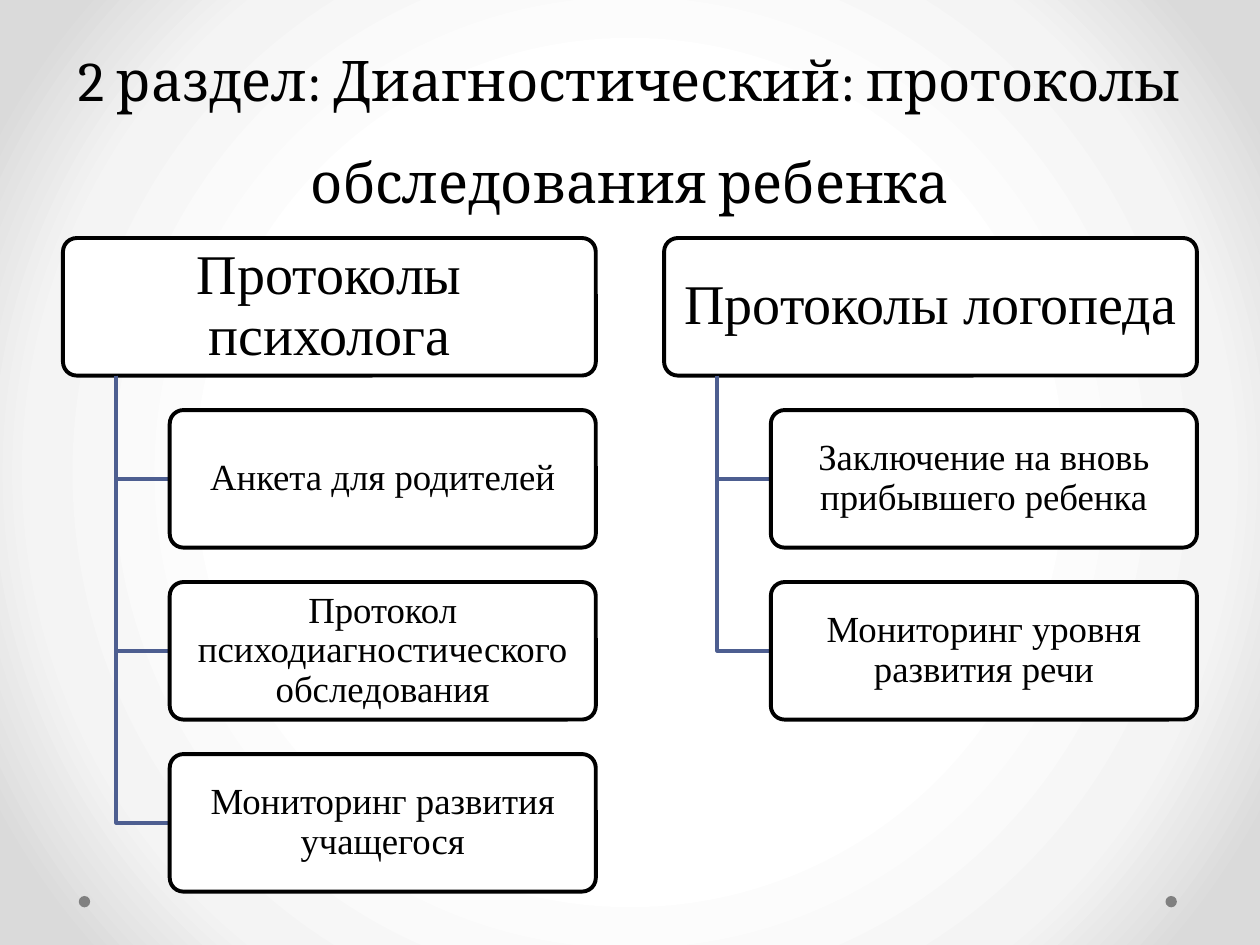
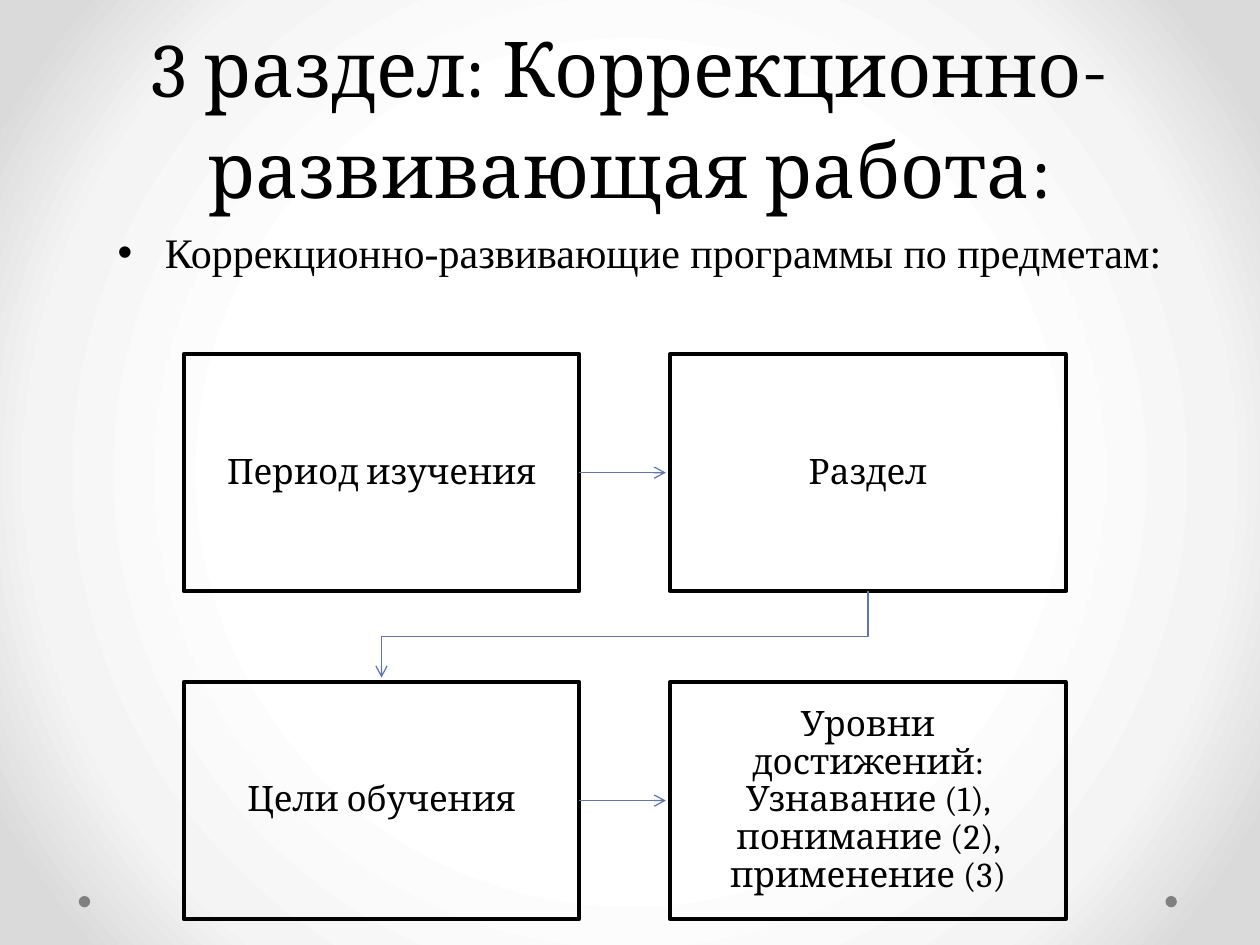
import pptx
import pptx.util
import pptx.oxml
import pptx.oxml.ns
import pptx.dml.color
import pptx.enum.shapes
import pptx.enum.text
import lxml.etree

Pt = pptx.util.Pt
RGB = pptx.dml.color.RGBColor.from_string
SHAPES = pptx.enum.shapes.MSO_SHAPE
ANCHOR = pptx.enum.text.MSO_ANCHOR
ALIGN = pptx.enum.text.PP_ALIGN
qn = pptx.oxml.ns.qn

COLORS = {
    "ink": "000000",
    "paper": "FFFFFF",
    "mist": "F4F4F4",
    "edge": "DADADA",
    "dot": "808080",
    "branch": "4D5E90",
    "arrow": "6076B4",
}
SERIF = "Times New Roman"
DISPLAY = "Cambria"


def add_box(slide, preset, bounds, fill, insets, text, font, size):
    """Add a black-outlined box with centred text; fill None leaves it clear."""
    box = slide.shapes.add_shape(preset, *[Pt(v) for v in bounds])
    box.shadow.inherit = False
    if fill:
        box.fill.solid()
        box.fill.fore_color.rgb = RGB(fill)
    else:
        box.fill.background()
    box.line.color.rgb = RGB(COLORS["ink"])
    box.line.width = Pt(2.25)
    if preset == SHAPES.ROUNDED_RECTANGLE:
        box.adjustments[0] = 0.1
    frame = box.text_frame
    frame.word_wrap = True
    frame.vertical_anchor = ANCHOR.MIDDLE
    frame.margin_left = frame.margin_right = Pt(insets[0])
    frame.margin_top = frame.margin_bottom = Pt(insets[1])
    paragraph = frame.paragraphs[0]
    paragraph.alignment = ALIGN.CENTER
    paragraph.line_spacing = 0.9
    run = paragraph.add_run()
    run.text = text
    run.font.name = font
    run.font.size = Pt(size)
    run.font.color.rgb = RGB(COLORS["ink"])


def trace_line(slide, points, color, width, arrow=False):
    """Draw a connector through two points, or an open outline through more."""
    points = [(Pt(x), Pt(y)) for x, y in points]
    if len(points) == 2:
        trace = slide.shapes.add_connector(
            pptx.enum.shapes.MSO_CONNECTOR.STRAIGHT, *points[0], *points[1])
    else:
        builder = slide.shapes.build_freeform(*points[0])
        builder.add_line_segments(points[1:], close=False)
        trace = builder.convert_to_shape()
        trace.fill.background()
    trace.line.color.rgb = RGB(color)
    trace.line.width = Pt(width)
    properties = trace._element.spPr
    if arrow:
        lxml.etree.SubElement(properties.find(qn("a:ln")), qn("a:tailEnd"), type="arrow")
    lxml.etree.SubElement(properties, qn("a:effectLst"))


deck = pptx.Presentation()
deck.slide_width = Pt(720)
deck.slide_height = Pt(540)

# Background, corner dots and title of every slide
gradient_stops = "".join(
    f'<a:gs pos="{percent * 1000}"><a:srgbClr val="{COLORS[name]}"/></a:gs>'
    for percent, name in [(50, "paper"), (76, "mist"), (92, "edge")])
background = (
    f'<p:bg {pptx.oxml.ns.nsdecls("p", "a")}><p:bgPr><a:gradFill rotWithShape="1">'
    f'<a:gsLst>{gradient_stops}</a:gsLst><a:path path="circle">'
    '<a:fillToRect l="50000" t="50000" r="50000" b="50000"/></a:path></a:gradFill>'
    '<a:effectLst/></p:bgPr></p:bg>')

titles = [
    ("2 раздел: Диагностический: протоколы обследования ребенка", 32),
    ("3 раздел: Коррекционно-развивающая работа:", 44),
]
slides = []
for title, size in titles:
    slide = deck.slides.add_slide(deck.slide_layouts[6])
    slides.append(slide)
    slide._element.cSld.insert(0, pptx.oxml.parse_xml(background))
    for dot_left in (666, 45):
        dot = slide.shapes.add_shape(
            SHAPES.OVAL, Pt(dot_left), Pt(512), Pt(6.5), Pt(6.5))
        dot.shadow.inherit = False
        dot.fill.solid()
        dot.fill.fore_color.rgb = RGB(COLORS["dot"])
        dot.line.fill.background()
    heading = slide.shapes.add_textbox(Pt(36), Pt(0), Pt(648), Pt(126)).text_frame
    heading.word_wrap = True
    heading.vertical_anchor = ANCHOR.BOTTOM
    paragraph = heading.paragraphs[0]
    paragraph.alignment = ALIGN.CENTER
    paragraph.line_spacing = Pt(58)
    run = paragraph.add_run()
    run.text = title
    run.font.name = DISPLAY
    run.font.size = Pt(size)
    run.font.color.rgb = RGB(COLORS["ink"])

diagnostics, correction = slides

# Diagnostics: two specialists, each with a tree of documents
protocols = {
    "Протоколы психолога": [
        "Анкета для родителей",
        "Протокол психодиагностического обследования",
        "Мониторинг развития учащегося",
    ],
    "Протоколы логопеда": [
        "Заключение на вновь прибывшего ребенка",
        "Мониторинг уровня развития речи",
    ],
}
tree_top, level_height, level_step = 136, 78.6, 98.3
head_width, indent = 304.5, 61
for column, (specialist, documents) in enumerate(protocols.items()):
    left = 36 + column * 343.5
    trunk = left + indent / 2
    add_box(diagnostics, SHAPES.ROUNDED_RECTANGLE,
            (left, tree_top, head_width, level_height),
            COLORS["paper"], (7.3, 5), specialist, SERIF, 32)
    for level, document in enumerate(documents, start=1):
        top = tree_top + level * level_step
        middle = top + level_height / 2
        trace_line(diagnostics,
                   [(trunk, tree_top + level_height), (trunk, middle), (left + indent, middle)],
                   COLORS["branch"], 2.25)
        add_box(diagnostics, SHAPES.ROUNDED_RECTANGLE,
                (left + indent, top, head_width - indent, level_height),
                COLORS["paper"], (5, 4.2), document, SERIF, 21)

# Correction: lead-in bullet and a four-step flow
lead_in = correction.shapes.add_textbox(Pt(36), Pt(126), Pt(659), Pt(356)).text_frame
lead_in.word_wrap = True
paragraph = lead_in.paragraphs[0]
paragraph.alignment = ALIGN.CENTER
paragraph.space_before = Pt(4.8)
bullet = paragraph._element.get_or_add_pPr()
bullet.set("marL", str(Pt(27)))
bullet.set("indent", str(Pt(-27)))
lxml.etree.SubElement(bullet, qn("a:buFont"), typeface="Arial")
lxml.etree.SubElement(bullet, qn("a:buChar"), char="•")
run = paragraph.add_run()
run.text = "Коррекционно-развивающие программы по предметам:"
run.font.name = SERIF
run.font.size = Pt(24)
run.font.color.rgb = RGB(COLORS["ink"])

steps = [
    "Период изучения",
    "Раздел",
    "Цели обучения",
    "Уровни достижений: Узнавание (1), понимание (2), применение (3)",
]
step_width, step_height, gap = 226, 135.6, 2.5
step_lefts, step_tops = (105, 383), (202.3, 389.7)
for index, step in enumerate(steps):
    left, top = step_lefts[index % 2], step_tops[index // 2]
    add_box(correction, SHAPES.RECTANGLE, (left, top, step_width, step_height),
            None, (11.5, 11.5), step, DISPLAY, 20)
for top in step_tops:
    middle = top + step_height / 2
    trace_line(correction,
               [(step_lefts[0] + step_width, middle), (step_lefts[1] - gap, middle)],
               COLORS["arrow"], 0.75, arrow=True)
first_center, second_center = [left + step_width / 2 for left in step_lefts]
row_end = step_tops[0] + step_height
turn = (row_end + step_tops[1]) / 2
trace_line(correction,
           [(second_center, row_end), (second_center, turn),
            (first_center, turn), (first_center, step_tops[1] - gap)],
           COLORS["arrow"], 0.75, arrow=True)

deck.save("out.pptx")
